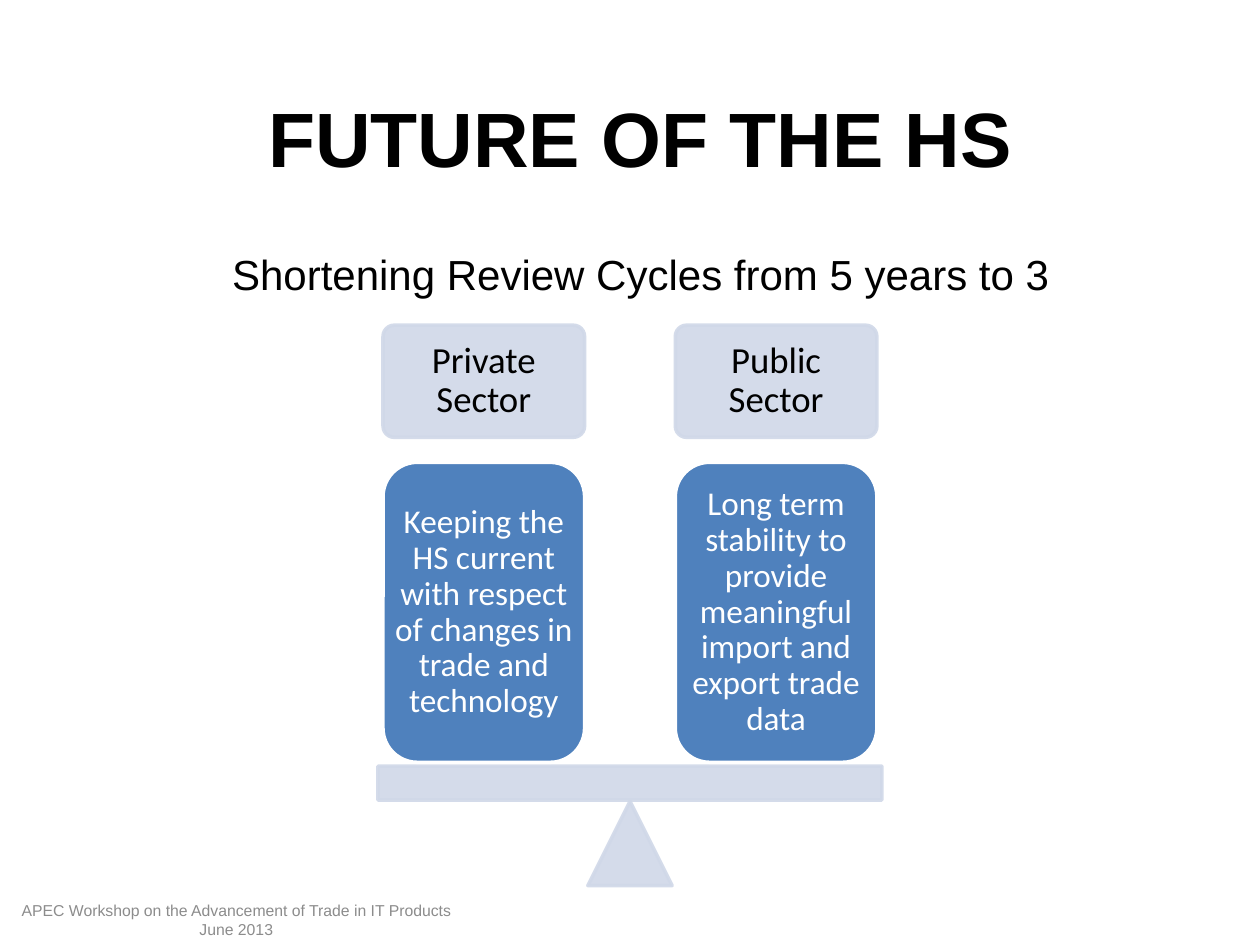
import pptx
import pptx.util
import pptx.dml.color
import pptx.enum.shapes
import pptx.enum.text
import pptx.oxml.ns
import lxml.etree

Pt = pptx.util.Pt
SHAPE = pptx.enum.shapes.MSO_SHAPE
ANCHOR = pptx.enum.text.MSO_ANCHOR


def paint(fill, color, alpha=100):
    fill.solid()
    fill.fore_color.rgb = pptx.dml.color.RGBColor.from_string(color)
    if alpha < 100:
        for clr in fill._xPr.iter(pptx.oxml.ns.qn("a:srgbClr")):
            if clr.getparent().getparent() is fill._xPr:
                tag = pptx.oxml.ns.qn("a:alpha")
                lxml.etree.SubElement(clr, tag).set("val", str(alpha * 1000))


def write(shape, text, color, inset, anchor, spacing, **font):
    tf = shape.text_frame
    tf.word_wrap = True
    tf.vertical_anchor = anchor
    for side, value in zip(("left", "top", "right", "bottom"), inset):
        setattr(tf, "margin_" + side, Pt(value))
    p = tf.paragraphs[0]
    p.alignment = pptx.enum.text.PP_ALIGN.CENTER
    p.line_spacing = spacing
    r = p.add_run()
    r.text = text
    for name, value in font.items():
        setattr(r.font, name, value)
    paint(r.font.fill, color)


prs = pptx.Presentation()
prs.slide_width, prs.slide_height = Pt(720), Pt(540)
s = prs.slides.add_slide(prs.slide_layouts[6])

labels = [
    ("FUTURE OF THE HS", (144, 48.2, 444.2, 60.5), "000000", ANCHOR.TOP, 44, True),
    ("Shortening Review Cycles from 5 years to 3", (66.2, 138.2, 599.8, 79.9), "000000", ANCHOR.TOP, 24, False),
    ("APEC Workshop on the Advancement of Trade in IT Products June 2013", (0, 511.2, 270, 28.8), "8C8C8C", ANCHOR.MIDDLE, 9, False),
]
for text, box, color, anchor, size, bold in labels:
    sp = s.shapes.add_textbox(*map(Pt, box))
    write(sp, text, color, (7.2, 3.6, 7.2, 3.6), anchor, 1, name="Arial", size=Pt(size), bold=bold)

center, offset, width = 360, 83.5, 115.2
pale = {"color": "D0D8E8", "alpha": 90}
parts = [
    (SHAPE.ISOSCELES_TRIANGLE, (center - 24.1, 457.9, 48.2, 48.2), pale, pale, None),
    (SHAPE.RECTANGLE, (center - 144, 437.8, 288, 19.4), pale, pale, None),
]
sectors = [
    ("Private Sector", "Keeping the HS current with respect of changes in trade and technology"),
    ("Public Sector", "Long term stability to provide meaningful import and export trade data"),
]
for side, (sector, aim) in zip((-1, 1), sectors):
    left = center + side * offset - width / 2
    parts.append((SHAPE.ROUNDED_RECTANGLE, (left, 185.8, width, 64.1), pale, pale,
                  (sector, "000000", 4.6, 21, 0.1)))
    parts.append((SHAPE.ROUNDED_RECTANGLE, (left, 264.2, width, 171.4), {"color": "4F81BD"}, {"color": "FFFFFF"},
                  (aim, "FFFFFF", 0, 19, 0.17)))

for kind, box, fill, line, label in parts:
    sp = s.shapes.add_shape(kind, *map(Pt, box))
    sp.shadow.inherit = False
    sp.line.width = Pt(2)
    paint(sp.fill, **fill)
    paint(sp.line.fill, **line)
    if label:
        text, color, inset, size, radius = label
        sp.adjustments[0] = radius
        write(sp, text, color, (inset,) * 4, ANCHOR.MIDDLE, 0.9, name="Calibri", size=Pt(size))

prs.save("out.pptx")
